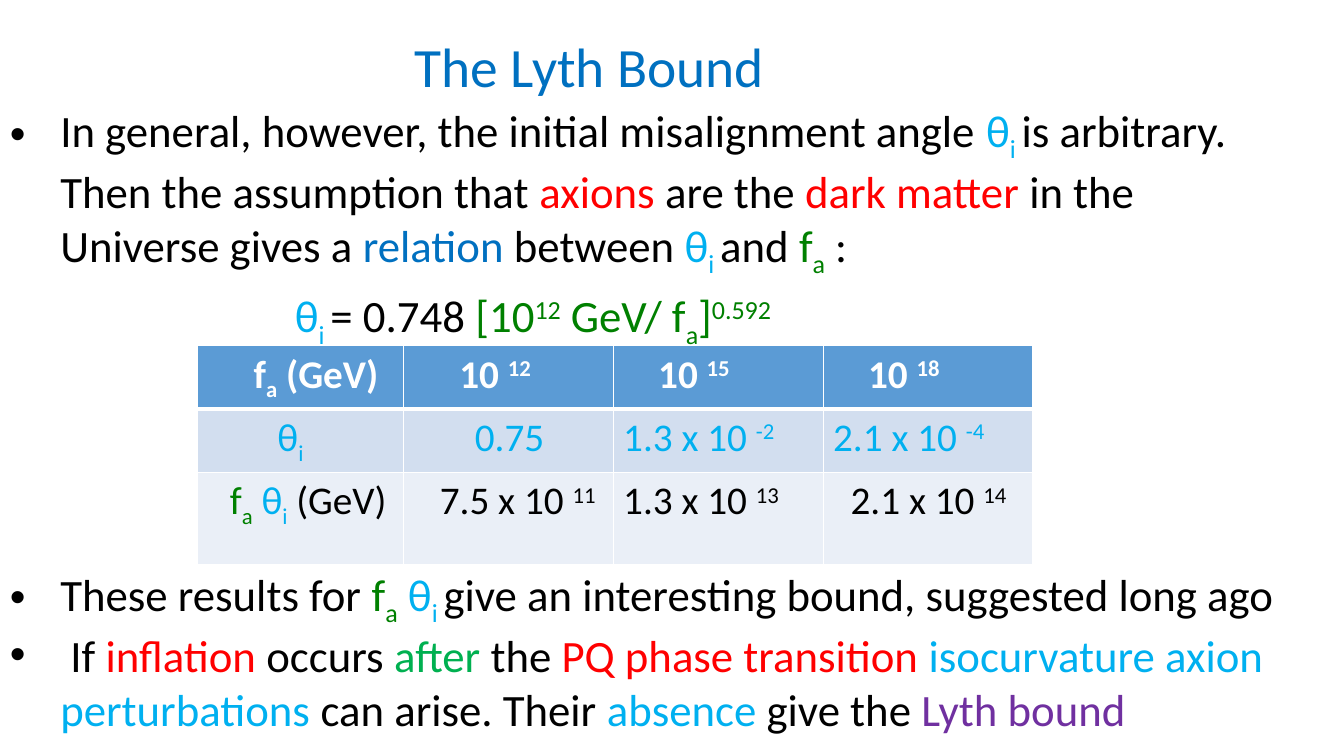
from dataclasses import dataclass
from typing import NamedTuple

from lxml import etree
from pptx import Presentation
from pptx import util as u
from pptx.dml.color import RGBColor
from pptx.enum import text
from pptx.oxml import ns


@dataclass(frozen=True)
class Theme:
    font: str = "Calibri"
    title_size: float = 39.6
    body_size: float = 32
    table_size: float = 28
    black: str = "000000"
    white: str = "FFFFFF"
    blue: str = "0070C0"
    cyan: str = "00B0F0"
    red: str = "FF0000"
    dark_green: str = "008000"
    green: str = "00B050"
    purple: str = "7030A0"
    row_fills: tuple[str, ...] = ("5B9BD5", "D2DEEF", "EAEFF7")


THEME = Theme()
SUB, SUPER = -25, 30


class Run(NamedTuple):
    text: str
    color: str = THEME.black
    baseline: int = 0


@dataclass(frozen=True)
class Line:
    runs: tuple[Run, ...]
    indent: float = 0
    bullet: bool = False
    space_before: float = 0


@dataclass(frozen=True)
class TextBlock:
    box: tuple[float, float, float, float]
    lines: tuple[Line, ...]


# Symbols and numbers used throughout
F_A = (Run("f", THEME.dark_green), Run("a", THEME.dark_green, SUB))


def theta(tail: str = "") -> tuple[Run, ...]:
    return Run("θ", THEME.cyan), Run("i" + tail, THEME.cyan, SUB)


def power(base: str, exponent: str, color: str = THEME.black) -> tuple[Run, ...]:
    return Run(base + " ", color), Run(exponent, color, SUPER)


# Slide content
TITLE = Line((Run("The Lyth Bound", THEME.blue),), indent=223)
RELATION = TextBlock((0, 70, 898.5, 180), (
    Line((Run("In general, however, the initial misalignment angle "), *theta(" "),
          Run("is arbitrary. Then the assumption that "), Run("axions", THEME.red),
          Run(" are the "), Run("dark matter ", THEME.red),
          Run("in the Universe gives a"), Run(" relation ", THEME.blue),
          Run("between "), *theta(" "), Run("and "), *F_A, Run(" :")),
         indent=36, bullet=True, space_before=6.4),
    Line((*theta(" "), Run("= 0.748 "), Run("[10", THEME.dark_green),
          Run("12", THEME.dark_green, SUPER), Run(" GeV/ f", THEME.dark_green),
          Run("a", THEME.dark_green, SUB), Run("]", THEME.dark_green),
          Run("0.592", THEME.dark_green, SUPER)),
         indent=203.5, space_before=6.4),
))
BOUND = TextBlock((0, 401, 934, 124), (
    Line((Run("These results for "), *F_A, Run(" "), *theta(" "),
          Run("give an interesting bound, suggested long ago")),
         indent=36, bullet=True),
    Line((Run(" If "), Run("inflation", THEME.red), Run(" occurs "),
          Run("after", THEME.green), Run(" the "),
          Run("PQ phase transition ", THEME.red),
          Run("isocurvature axion perturbations ", THEME.cyan),
          Run("can arise. Their "), Run("absence ", THEME.cyan),
          Run("give the "), Run("Lyth bound", THEME.purple)),
         indent=36, bullet=True),
))
TABLE_ROWS = (
    (Line((Run("f", THEME.white), Run("a", THEME.white, SUB),
           Run(" (GeV)", THEME.white)), 33),
     Line(power("10", "12", THEME.white), 33),
     Line(power("10", "15", THEME.white), 25),
     Line(power("10", "18", THEME.white), 25)),
    (Line(theta(), 50),
     Line((Run("0.75", THEME.cyan),), 44),
     Line(power("1.3 x 10", "-2", THEME.cyan)),
     Line(power("2.1 x 10", "-4", THEME.cyan))),
    (Line((*F_A, Run(" "), *theta(), Run(" (GeV)")), 16),
     Line(power("7.5 x 10", "11"), 19),
     Line(power("1.3 x 10", "13")),
     Line(power("2.1 x 10", "14"), 12.5)),
)
TABLE_ORIGIN = (141, 247)
COLUMN_WIDTHS = (147, 150, 150, 150)
ROW_HEIGHTS = (35.5, 35.5, 66)


# Drawing functions
def write_line(paragraph, line: Line, size: float, bold: bool = False) -> None:
    formats = {"alignment": text.PP_ALIGN.LEFT, "space_before": u.Pt(line.space_before)}
    for name, value in formats.items():
        setattr(paragraph, name, value)
    properties = paragraph._p.get_or_add_pPr()
    properties.set("marL", str(u.Pt(line.indent)))
    properties.set("indent", str(u.Pt(-line.indent if line.bullet else 0)))
    if line.bullet:
        etree.SubElement(properties, ns.qn("a:buFont")).set("typeface", "Arial")
        etree.SubElement(properties, ns.qn("a:buChar")).set("char", "•")
    font_formats = {"name": THEME.font, "size": u.Pt(size), "bold": bold}
    for item in line.runs:
        run = paragraph.add_run()
        run.text = item.text
        for name, value in font_formats.items():
            setattr(run.font, name, value)
        run.font.color.rgb = RGBColor.from_string(item.color)
        if item.baseline:
            run._r.get_or_add_rPr().set("baseline", str(item.baseline * 1000))


def add_title(slide) -> None:
    title = slide.shapes.title
    place = {"left": 66, "top": 29, "width": 832, "height": 41}
    for name, value in place.items():
        setattr(title, name, u.Pt(value))
    frame_formats = {"vertical_anchor": text.MSO_ANCHOR.MIDDLE,
                     "auto_size": text.MSO_AUTO_SIZE.NONE, "word_wrap": True}
    for name, value in frame_formats.items():
        setattr(title.text_frame, name, value)
    paragraph = title.text_frame.paragraphs[0]
    paragraph.line_spacing = 0.9
    write_line(paragraph, TITLE, THEME.title_size)


def add_text_block(slide, block: TextBlock) -> None:
    shape = slide.shapes.add_textbox(*map(u.Pt, block.box))
    frame = shape.text_frame
    frame.word_wrap = True
    for index, line in enumerate(block.lines):
        paragraph = frame.add_paragraph() if index else frame.paragraphs[0]
        write_line(paragraph, line, THEME.body_size)


def set_borders(cell, widths: dict[str, float]) -> None:
    properties = cell._tc.get_or_add_tcPr()
    for position, (side, width) in enumerate(widths.items()):
        border = etree.Element(ns.qn(f"a:ln{side}"), w=str(u.Pt(width)))
        fill = etree.SubElement(border, ns.qn("a:solidFill"))
        etree.SubElement(fill, ns.qn("a:srgbClr")).set("val", THEME.white)
        properties.insert(position, border)


def add_results_table(slide) -> None:
    frame = slide.shapes.add_table(
        len(ROW_HEIGHTS), len(COLUMN_WIDTHS), *map(u.Pt, TABLE_ORIGIN),
        u.Pt(sum(COLUMN_WIDTHS)), u.Pt(sum(ROW_HEIGHTS)))
    table = frame.table
    for column, width in zip(table.columns, COLUMN_WIDTHS):
        column.width = u.Pt(width)
    for row_index, (row, height) in enumerate(zip(table.rows, ROW_HEIGHTS)):
        row.height = u.Pt(height)
        header = row_index == 0
        for cell, line in zip(row.cells, TABLE_ROWS[row_index]):
            cell.fill.solid()
            cell.fill.fore_color.rgb = RGBColor.from_string(THEME.row_fills[row_index])
            top, bottom = 3 if row_index == 1 else 1, 3 if header else 1
            set_borders(cell, {"L": 1, "R": 1, "T": top, "B": bottom})
            write_line(cell.text_frame.paragraphs[0], line, THEME.table_size, bold=header)


def main() -> None:
    presentation = Presentation()
    presentation.slide_width, presentation.slide_height = u.Pt(960), u.Pt(540)
    slide = presentation.slides.add_slide(presentation.slide_layouts[5])
    add_title(slide)
    add_results_table(slide)
    for block in (RELATION, BOUND):
        add_text_block(slide, block)
    presentation.save("out.pptx")


if __name__ == "__main__":
    main()
